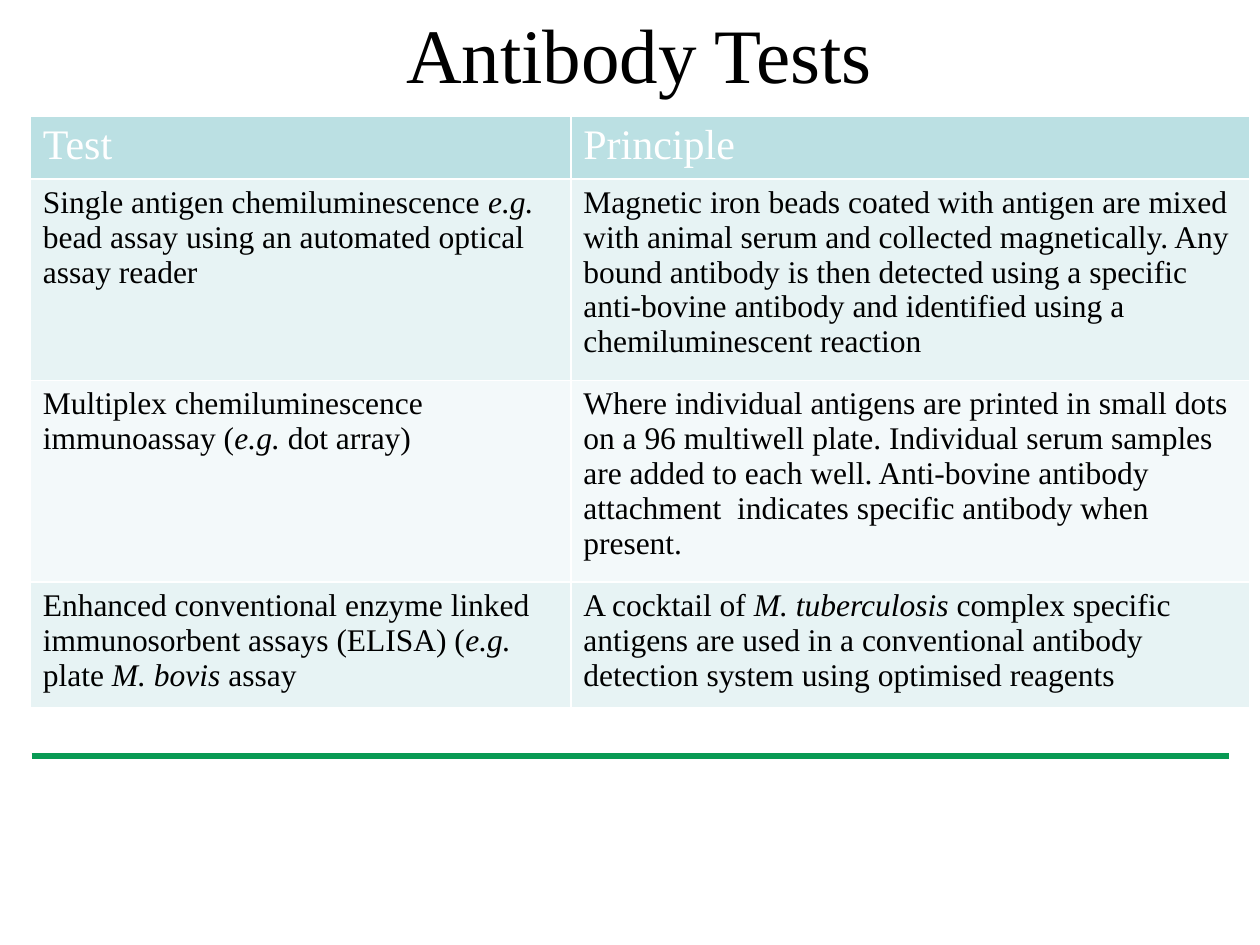
from dataclasses import dataclass

from lxml import etree
from pptx import Presentation
from pptx.dml.color import RGBColor
from pptx.enum import shapes, text
from pptx.oxml.ns import qn
from pptx.util import Inches, Pt

FONT = "Times New Roman"
BLACK = RGBColor(0x00, 0x00, 0x00)
WHITE = RGBColor(0xFF, 0xFF, 0xFF)
GREEN = RGBColor(0x08, 0x9A, 0x54)
HEADER_FILL = RGBColor(0xBB, 0xE0, 0xE3)
BAND_FILLS = (RGBColor(0xE7, 0xF3, 0xF4), RGBColor(0xF3, 0xF9, 0xFA))
COLUMN_WIDTHS = (4.29, 5.39)
HEADER_HEIGHT = 0.5


@dataclass
class TestRow:
    """Table row; in its texts, asterisks enclose italic words."""
    test: str
    principle: str
    height: float


TESTS = [
    TestRow("Single antigen chemiluminescence *e.g. *bead assay using an "
            "automated optical assay reader",
            "Magnetic iron beads coated with antigen are mixed with animal serum "
            "and collected magnetically. Any bound antibody is then detected using "
            "a specific anti-bovine antibody and identified using a "
            "chemiluminescent reaction", 1.6),
    TestRow("Multiplex chemiluminescence immunoassay (*e.g. *dot array)",
            "Where individual antigens are printed in small dots on a 96 multiwell "
            "plate. Individual serum samples are added to each well. Anti-bovine "
            "antibody attachment  indicates specific antibody when present.", 1.6),
    TestRow("Enhanced conventional enzyme linked immunosorbent assays (ELISA) "
            "(*e.g.* plate *M. bovis *assay",
            "A cocktail of *M. tuberculosis *complex specific antigens are used in "
            "a conventional antibody detection system using optimised reagents", 1.0),
]


def write(tf, content: str, *, size: float, color: RGBColor = BLACK,
          align=text.PP_ALIGN.LEFT) -> None:
    """Fill a text frame, setting parts between asterisks in italics."""
    p = tf.paragraphs[0]
    p.alignment = align
    for i, part in enumerate(content.split("*")):
        r = p.add_run()
        r.text = part
        r.font.name = FONT
        r.font.size = Pt(size)
        r.font.color.rgb = color
        r.font.italic = i % 2 == 1


def set_borders(cell, color: RGBColor, width: float) -> None:
    tc_pr = cell._tc.get_or_add_tcPr()
    for i, side in enumerate(("lnL", "lnR", "lnT", "lnB")):
        ln = etree.Element(qn(f"a:{side}"), w=str(Pt(width)))
        fill = etree.SubElement(ln, qn("a:solidFill"))
        etree.SubElement(fill, qn("a:srgbClr"), val=str(color))
        tc_pr.insert(i, ln)


def add_title(slide, content: str) -> None:
    sp = slide.shapes.title
    sp.left, sp.top = Inches(0.51), Inches(0)
    sp.width, sp.height = Inches(9.13), Inches(0.84)
    tf = sp.text_frame
    tf.word_wrap = True
    tf.auto_size = text.MSO_AUTO_SIZE.NONE
    tf.vertical_anchor = text.MSO_ANCHOR.MIDDLE
    write(tf, content, size=44, align=text.PP_ALIGN.CENTER)


def add_test_table(slide, headings: tuple[str, str], tests: list[TestRow]) -> None:
    heights = [HEADER_HEIGHT] + [t.height for t in tests]
    table = slide.shapes.add_table(
        len(heights), len(headings), Inches(0.24), Inches(0.92),
        Inches(sum(COLUMN_WIDTHS)), Inches(sum(heights))).table
    for column, width in zip(table.columns, COLUMN_WIDTHS):
        column.width = Inches(width)
    rows = [headings] + [(t.test, t.principle) for t in tests]
    for i, (row, height) in enumerate(zip(rows, heights)):
        table.rows[i].height = Inches(height)
        for j, content in enumerate(row):
            cell = table.cell(i, j)
            cell.fill.solid()
            cell.fill.fore_color.rgb = BAND_FILLS[(i - 1) % 2] if i else HEADER_FILL
            set_borders(cell, WHITE, 1)
            write(cell.text_frame, content, size=18 if i else 24,
                  color=BLACK if i else WHITE)


def add_rule(slide, y: float) -> None:
    line = slide.shapes.add_connector(
        shapes.MSO_CONNECTOR.STRAIGHT, Inches(0.25), Inches(y), Inches(9.75), Inches(y))
    line.line.color.rgb = GREEN
    line.line.width = Pt(3)
    etree.SubElement(line._element.spPr, qn("a:effectLst"))


def main() -> None:
    prs = Presentation()
    prs.slide_width, prs.slide_height = Inches(10), Inches(7.5)
    slide = prs.slides.add_slide(prs.slide_layouts[5])
    add_rule(slide, 6)
    add_title(slide, "Antibody Tests")
    add_test_table(slide, ("Test", "Principle"), TESTS)
    prs.save("out.pptx")


if __name__ == "__main__":
    main()
